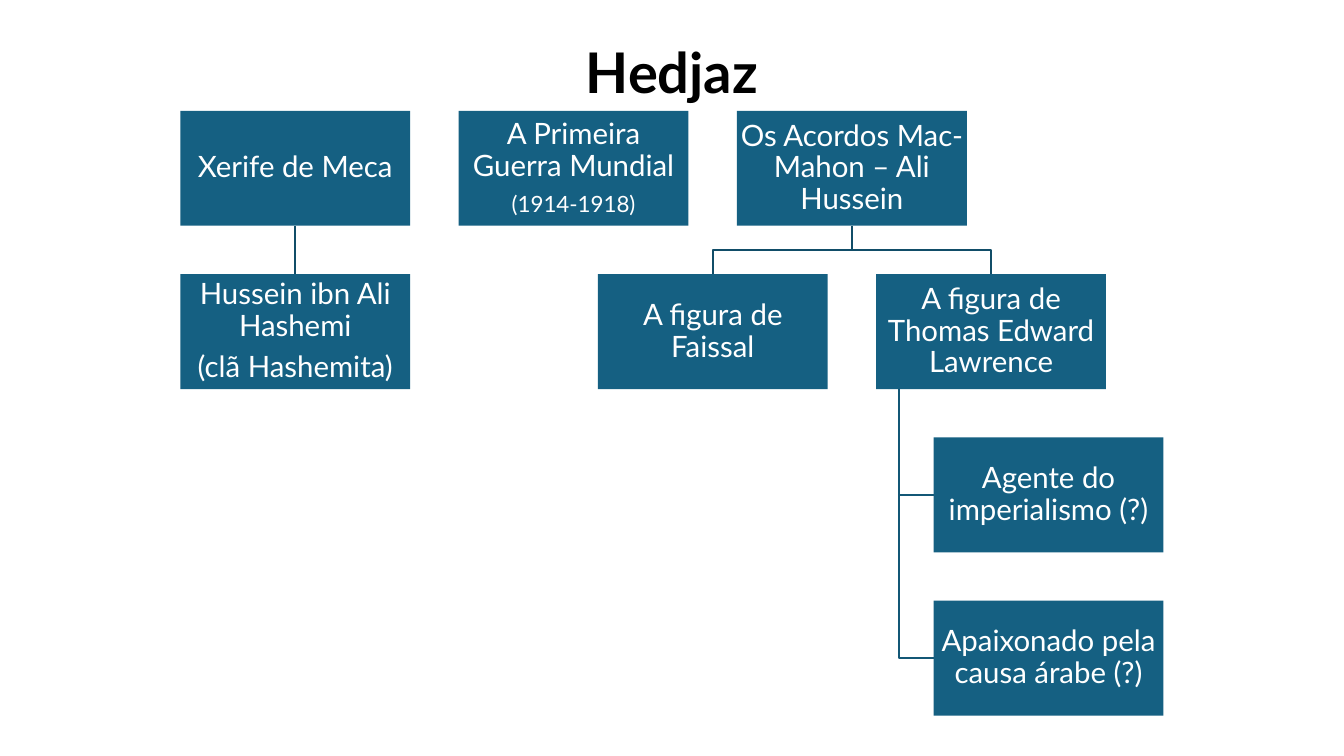
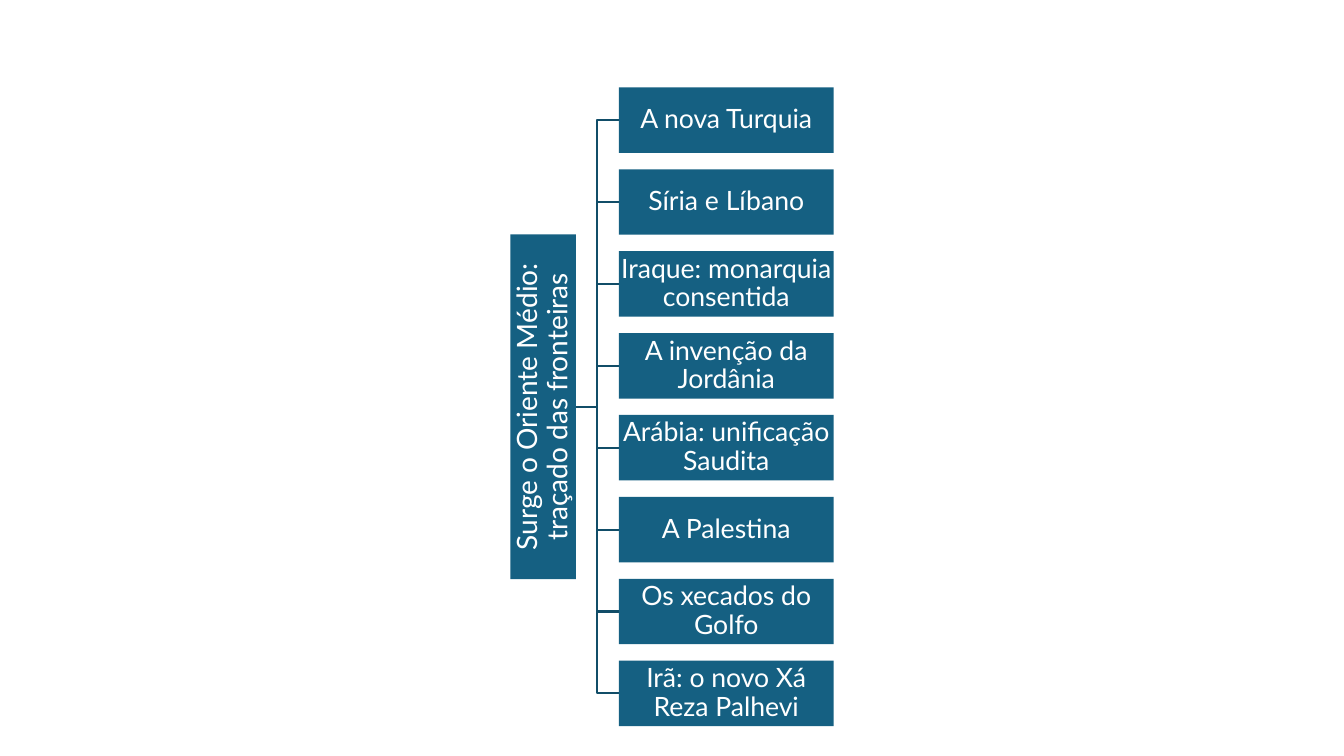
from dataclasses import dataclass

from lxml import etree
from pptx import Presentation
from pptx import util as u
from pptx.dml import color
from pptx.enum import shapes, text
from pptx.oxml import ns


@dataclass(frozen=True)
class Theme:
    font: str = "Lato"
    box_fill: str = "156082"
    box_text: str = "FFFFFF"
    title_text: str = "000000"
    branch: str = "114D68"
    sub_branch: str = "135776"
    title_size: float = 40
    chart_size: float = 21
    note_size: float = 16
    root_size: float = 20
    item_size: float = 19
    line_width: float = 1.5
    line_spacing: float = 0.9
    paragraph_gap: float = 7
    inset: float = 1


THEME = Theme()


@dataclass(frozen=True)
class Box:
    """A rectangle, measured in points."""
    left: float
    top: float
    width: float
    height: float

    @property
    def right(self):
        return self.left + self.width

    @property
    def bottom(self):
        return self.top + self.height

    @property
    def center(self):
        return self.left + self.width / 2

    @property
    def middle(self):
        return self.top + self.height / 2

    def lengths(self):
        return [u.Pt(value) for value in (self.left, self.top, self.width, self.height)]


def rgb(value):
    return color.RGBColor.from_string(value)


def write_text(shape, *lines, size, text_color, bold=False, inset=None, last_size=None):
    """Fill a shape with centred paragraphs; last_size resizes the last one."""
    frame = shape.text_frame
    frame.word_wrap = True
    frame.vertical_anchor = text.MSO_ANCHOR.MIDDLE
    if inset is not None:
        frame.margin_left = frame.margin_right = u.Pt(inset)
        frame.margin_top = frame.margin_bottom = u.Pt(inset)
    frame.text = "\n".join(lines)
    for paragraph in frame.paragraphs:
        paragraph.alignment = text.PP_ALIGN.CENTER
        paragraph.line_spacing = THEME.line_spacing
        paragraph.space_after = u.Pt(THEME.paragraph_gap)
        font = paragraph.runs[0].font
        font.name = THEME.font
        font.size = u.Pt(size)
        font.bold = bold
        font.color.rgb = rgb(text_color)
    if last_size:
        font.size = u.Pt(last_size)


def add_title(slide, title):
    shape = slide.shapes.add_textbox(*Box(66, 28.8, 828, 50.4).lengths())
    write_text(shape, title, size=THEME.title_size, text_color=THEME.title_text, bold=True)


def add_box(slide, box, *lines, size, rotation=0, last_size=None):
    shape = slide.shapes.add_shape(shapes.MSO_SHAPE.RECTANGLE, *box.lengths())
    shape.shadow.inherit = False
    shape.rotation = rotation
    shape.fill.solid()
    shape.fill.fore_color.rgb = rgb(THEME.box_fill)
    shape.line.fill.background()
    write_text(shape, *lines, size=size, text_color=THEME.box_text,
               inset=THEME.inset, last_size=last_size)


def add_branch(slide, *points, line_color=THEME.branch):
    """Draw a straight connector, or an open outline when the line bends."""
    start, *rest = [(u.Pt(x), u.Pt(y)) for x, y in points]
    if len(rest) == 1:
        branch = slide.shapes.add_connector(shapes.MSO_CONNECTOR.STRAIGHT, *start, *rest[0])
        etree.SubElement(branch.line._get_or_add_ln().getparent(), ns.qn("a:effectLst"))
    else:
        builder = slide.shapes.build_freeform(*start)
        builder.add_line_segments(rest, close=False)
        branch = builder.convert_to_shape()
        branch.shadow.inherit = False
        branch.fill.background()
    branch.line.color.rgb = rgb(line_color)
    branch.line.width = u.Pt(THEME.line_width)


def build_hedjaz(slide):
    add_title(slide, "Hedjaz")
    width, height = 164.2, 82.1

    def cell(column, row, indent=0):
        return Box(128.8 + column * 198.8 + indent, 79.2 + row * 116.64, width, height)

    sharif, war, accords = (cell(column, 0) for column in range(3))
    hussein, faisal, lawrence = (cell(column, 1) for column in (0, 1.5, 2.5))
    agent, enthusiast = (cell(2.5, row, indent=width / 4) for row in (2, 3))

    # Branches
    add_branch(slide, (sharif.center, sharif.bottom), (hussein.center, hussein.top))
    fork = (accords.bottom + faisal.top) / 2
    for child in (faisal, lawrence):
        add_branch(slide, (accords.center, accords.bottom), (accords.center, fork),
                   (child.center, fork), (child.center, child.top))
    trunk = lawrence.left + width / 10
    for child in (agent, enthusiast):
        add_branch(slide, (trunk, lawrence.bottom), (trunk, child.middle),
                   (child.left, child.middle), line_color=THEME.sub_branch)

    # Boxes
    size = THEME.chart_size
    add_box(slide, war, "A Primeira Guerra Mundial", "(1914-1918)",
            size=size, last_size=THEME.note_size)
    for box, *lines in (
        (sharif, "Xerife de Meca"),
        (hussein, "Hussein ibn Ali Hashemi", "(clã Hashemita)"),
        (accords, "Os Acordos Mac-Mahon – Ali Hussein"),
        (faisal, "A figura de Faissal"),
        (lawrence, "A figura de Thomas Edward Lawrence"),
        (agent, "Agente do imperialismo (?)"),
        (enthusiast, "Apaixonado pela causa árabe (?)"),
    ):
        add_box(slide, box, *lines, size=size)


def build_borders(slide):
    topics = (
        "A nova Turquia",
        "Síria e Líbano",
        "Iraque: monarquia consentida",
        "A invenção da Jordânia",
        "Arábia: unificação Saudita",
        "A Palestina",
        "Os xecados do Golfo",
        "Irã: o novo Xá Reza Palhevi",
    )
    height = 46.8
    boxes = [Box(442.1, 62.4 + row * 58.5, 153.4, height) for row in range(len(topics))]
    middle = (boxes[0].top + boxes[-1].bottom) / 2
    root_center, root_length = 388, 246.2
    root = Box(root_center - root_length / 2, middle - height / 2, root_length, height)

    # Branches, from the right edge of the upright root
    root_edge = root_center + height / 2
    trunk = (root_edge + boxes[0].left) / 2
    for box in boxes:
        add_branch(slide, (root_edge, middle), (trunk, middle),
                   (trunk, box.middle), (box.left, box.middle))

    # Boxes
    add_box(slide, root, "Surge o Oriente Médio: traçado das fronteiras",
            size=THEME.root_size, rotation=270)
    for box, topic in zip(boxes, topics):
        add_box(slide, box, topic, size=THEME.item_size)


def main():
    presentation = Presentation()
    presentation.slide_width, presentation.slide_height = u.Pt(960), u.Pt(540)
    blank = presentation.slide_layouts[6]
    for build in (build_hedjaz, build_borders):
        build(presentation.slides.add_slide(blank))
    presentation.save("out.pptx")


if __name__ == "__main__":
    main()
